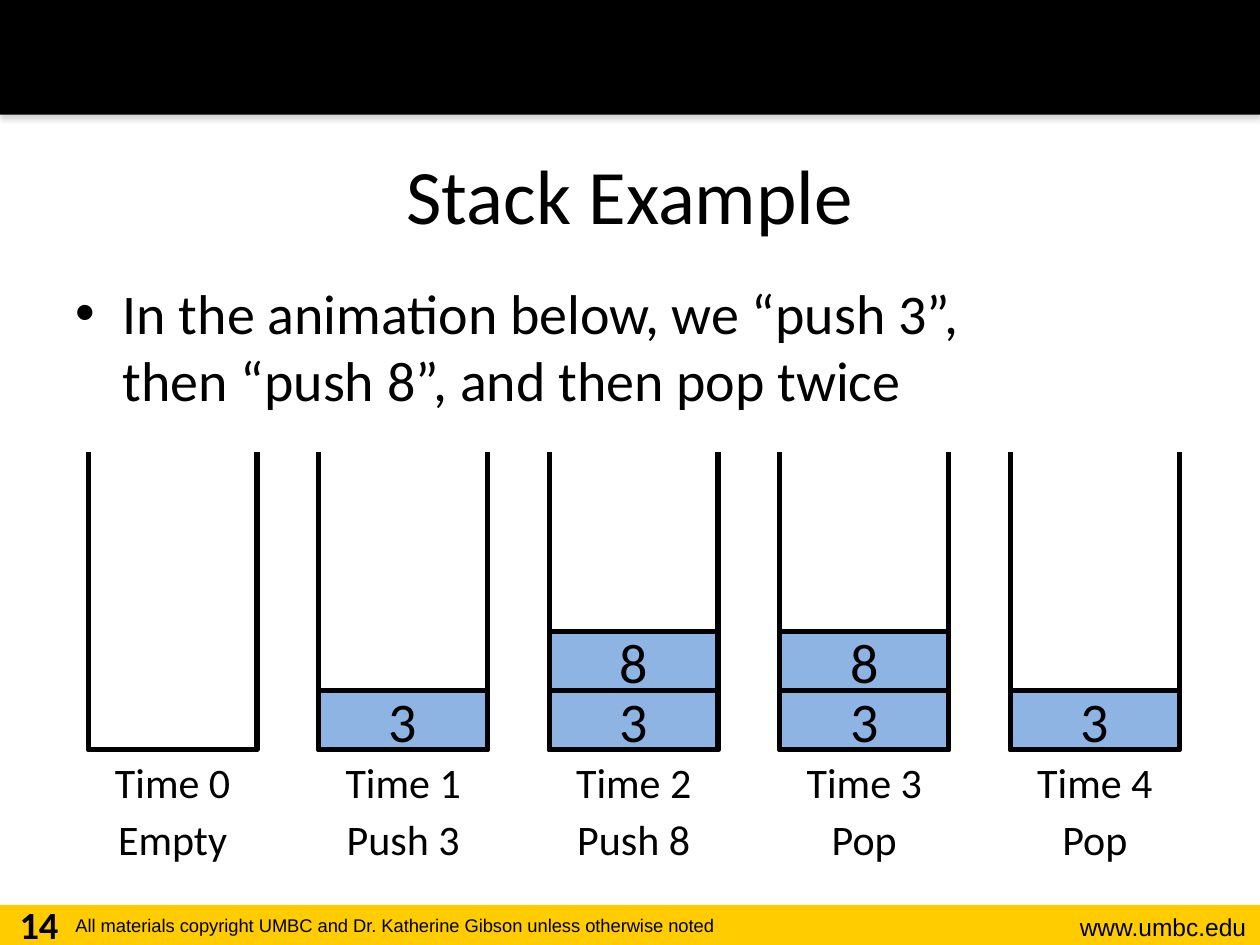
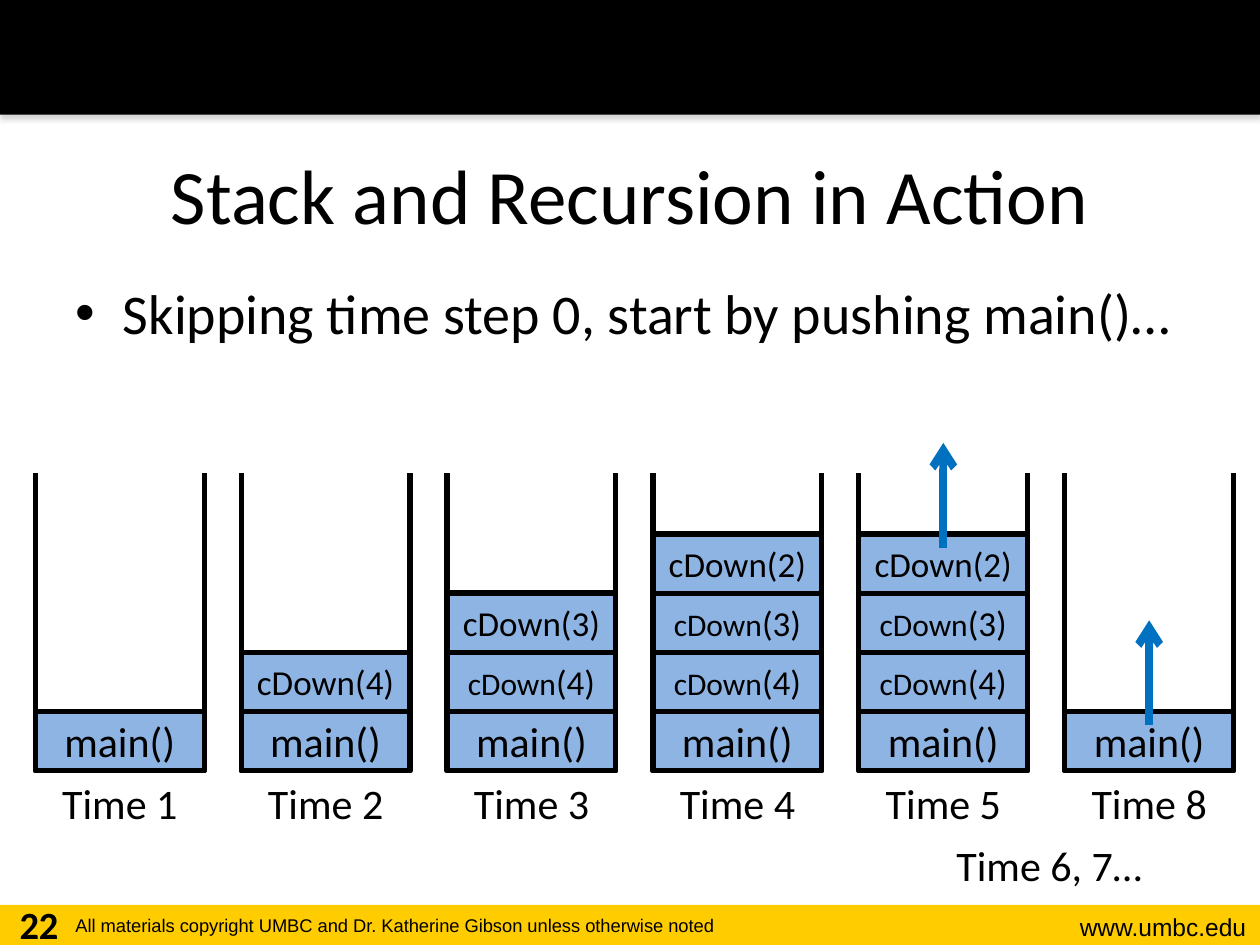
"""Build two slides that show how a stack grows and shrinks over time."""
from dataclasses import dataclass

from pptx import Presentation
from pptx.dml.color import RGBColor
from pptx.enum.shapes import MSO_CONNECTOR, MSO_SHAPE
from pptx.enum.text import MSO_ANCHOR, MSO_AUTO_SIZE, PP_ALIGN
from pptx.oxml.ns import qn
from pptx.util import Pt
from lxml.etree import SubElement


@dataclass(frozen=True)
class Theme:
    black: str = "000000"
    white: str = "FFFFFF"
    gold: str = "FFCC00"
    cell: str = "8EB4E3"
    arrow: str = "0070C0"
    shade: str = "808080"
    main: str = "Calibri"
    foot: str = "Arial"
    title: int = 44
    body: int = 32
    label: int = 24
    page: int = 22
    call: int = 20
    past: int = 18
    link: int = 14
    note: float = 10.5
    line: int = 3
    thick: float = 4.5


WIDE, HIGH = 720, 540
CUP_W, CUP_H = 96.5, 178.5
CELL_H, STEP = 34, 33.8
LABEL_W, LABEL_H, LABEL_GAP = 103, 36, 33


class Deck:
    def __init__(self, theme):
        self.theme = theme
        self.show = Presentation()
        self.show.slide_width, self.show.slide_height = Pt(WIDE), Pt(HIGH)
        self.slide = None

    def style(self, para, size, font=None, align=None, bold=None):
        para.alignment = align
        para.font.size = Pt(size)
        para.font.name = font or self.theme.main
        para.font.bold = bold
        para.font.color.rgb = RGBColor.from_string(self.theme.black)

    def rect(self, x, y, w, h, fill, line=None):
        shape = self.slide.shapes.add_shape(MSO_SHAPE.RECTANGLE, Pt(x), Pt(y), Pt(w), Pt(h))
        shape.shadow.inherit = False
        shape.fill.solid()
        shape.fill.fore_color.rgb = RGBColor.from_string(fill)
        if line:
            shape.line.color.rgb = RGBColor.from_string(line)
            shape.line.width = Pt(self.theme.line)
        else:
            shape.line.fill.background()
        return shape

    def text(self, x, y, w, h, words, size, font=None, align=PP_ALIGN.CENTER, bold=None):
        frame = self.slide.shapes.add_textbox(Pt(x), Pt(y), Pt(w), Pt(h)).text_frame
        frame.word_wrap = True
        frame.text = words
        self.style(frame.paragraphs[0], size, font, align, bold)

    def label(self, mid, y, words, width=LABEL_W):
        self.text(mid - width / 2, y, width, LABEL_H, words, self.theme.label)

    def holder(self, index, y, h, anchor):
        shape = self.slide.placeholders[index]
        shape.left, shape.top, shape.width, shape.height = Pt(36), Pt(y), Pt(648), Pt(h)
        frame = shape.text_frame
        frame.auto_size = MSO_AUTO_SIZE.NONE
        frame.word_wrap = True
        frame.vertical_anchor = anchor
        return frame.paragraphs[0]

    def bullet(self, para):
        props = para._p.get_or_add_pPr()
        props.set("marL", str(Pt(27)))
        props.set("indent", str(-Pt(27)))
        SubElement(props, qn("a:buFont")).set("typeface", self.theme.foot)
        SubElement(props, qn("a:buChar")).set("char", "•")

    def bands(self, page):
        look = self.theme
        self.rect(0, 517, WIDE, 23, look.gold)
        band = self.rect(0, 0, WIDE, 65.5, look.black)
        effect = band._element.spPr.find(qn("a:effectLst"))
        cast = SubElement(effect, qn("a:outerShdw"), blurRad=str(Pt(3.1)),
                          dist=str(Pt(1.8)), dir="5400000", rotWithShape="0")
        tint = SubElement(cast, qn("a:srgbClr"), val=look.shade)
        SubElement(tint, qn("a:alpha"), val="35000")
        self.text(576, 517.7, 143.3, 24.5, "www.umbc.edu", look.link, look.foot, PP_ALIGN.RIGHT)
        self.text(36, 519, 472, 21,
                  "All materials copyright UMBC and Dr. Katherine Gibson unless otherwise noted",
                  look.note, look.foot, PP_ALIGN.LEFT)
        self.text(0, 511.2, 44.6, 28.8, str(page), look.page, bold=True)

    def start(self, page, title, *lines):
        self.slide = self.show.slides.add_slide(self.show.slide_layouts[1])
        self.bands(page)
        head = self.holder(0, 65.5, 90, MSO_ANCHOR.MIDDLE)
        head.text = title
        self.style(head, self.theme.title, align=PP_ALIGN.CENTER)
        para = self.holder(1, 155.5, 355.7, MSO_ANCHOR.TOP)
        for index, line in enumerate(lines):
            if index:
                para.add_line_break()
            para.add_run().text = line
        self.bullet(para)
        para.space_before = Pt(0)
        self.style(para, self.theme.body, align=PP_ALIGN.LEFT)

    def cell(self, x, y, words, size, small=None):
        look = self.theme
        frame = self.rect(x, y, CUP_W, CELL_H, look.cell, look.black).text_frame
        frame.word_wrap = True
        frame.vertical_anchor = MSO_ANCHOR.MIDDLE
        para = frame.paragraphs[0]
        if small:
            name, mark, rest = words.partition("(")
            run = para.add_run()
            run.text = name
            run.font.size = Pt(small)
            para.add_run().text = mark + rest
        else:
            para.text = words
        self.style(para, size, align=PP_ALIGN.CENTER)

    def cup(self, x, top, *labels):
        look = self.theme
        self.rect(x, top, CUP_W, CUP_H, look.white, look.black)
        self.rect(x - 2.5, top - 4.6, CUP_W + 5, 11.5, look.white, look.white)
        for row, words in enumerate(labels):
            self.label(x + CUP_W / 2, top + CUP_H + row * LABEL_GAP, words)

    def arrow(self, x, y):
        link = self.slide.shapes.add_connector(
            MSO_CONNECTOR.STRAIGHT, Pt(x), Pt(y + 8), Pt(x), Pt(y - 52))
        link.line.color.rgb = RGBColor.from_string(self.theme.arrow)
        link.line.width = Pt(self.theme.thick)
        SubElement(link.line._get_or_add_ln(), qn("a:tailEnd"), type="arrow")
        SubElement(link._element.spPr, qn("a:effectLst"))


def level(top, row):
    """Return the top edge of a cell, counted from the floor of its cup."""
    return top + CUP_H - CELL_H - row * STEP


def values(deck):
    """Draw the slide that pushes and pops numbers."""
    deck.start(14, "Stack Example", "In the animation below, we “push 3”, ",
               "then “push 8”, and then pop twice")
    steps = [("Empty", ""), ("Push 3", "3"), ("Push 8", "38"), ("Pop", "38"), ("Pop", "3")]
    top = 250
    for time, (act, stack) in enumerate(steps):
        x = 50.4 + time * 131.75
        deck.cup(x, top, f"Time {time}", act)
        for row, value in enumerate(stack):
            deck.cell(x, level(top, row), value, deck.theme.body)


def calls(deck):
    """Draw the slide that pushes and pops function calls."""
    look = deck.theme
    deck.start(22, "Stack and Recursion in Action",
               "Skipping time step 0, start by pushing main()…")
    chain = ["main()", "cDown(4)", "cDown(3)", "cDown(2)"]
    steps = [(1, 1, False), (2, 2, False), (3, 3, False),
             (4, 4, False), (5, 4, True), (8, 1, True)]
    top = 262
    for index, (time, depth, pops) in enumerate(steps):
        x = 20.2 + index * 117.65
        deck.cup(x, top, f"Time {time}")
        for row, call in enumerate(chain[:depth]):
            size = look.call if row else look.label
            small = look.past if 0 < row < depth - 1 else None
            deck.cell(x, level(top, row), call, size, small)
        if pops:
            deck.arrow(x + CUP_W / 2, level(top, depth - 1))
    deck.label(599.5, 476, "Time 6, 7…", 129)


def main():
    """Build both slides and save them."""
    deck = Deck(Theme())
    values(deck)
    calls(deck)
    deck.show.save("out.pptx")


if __name__ == "__main__":
    main()
